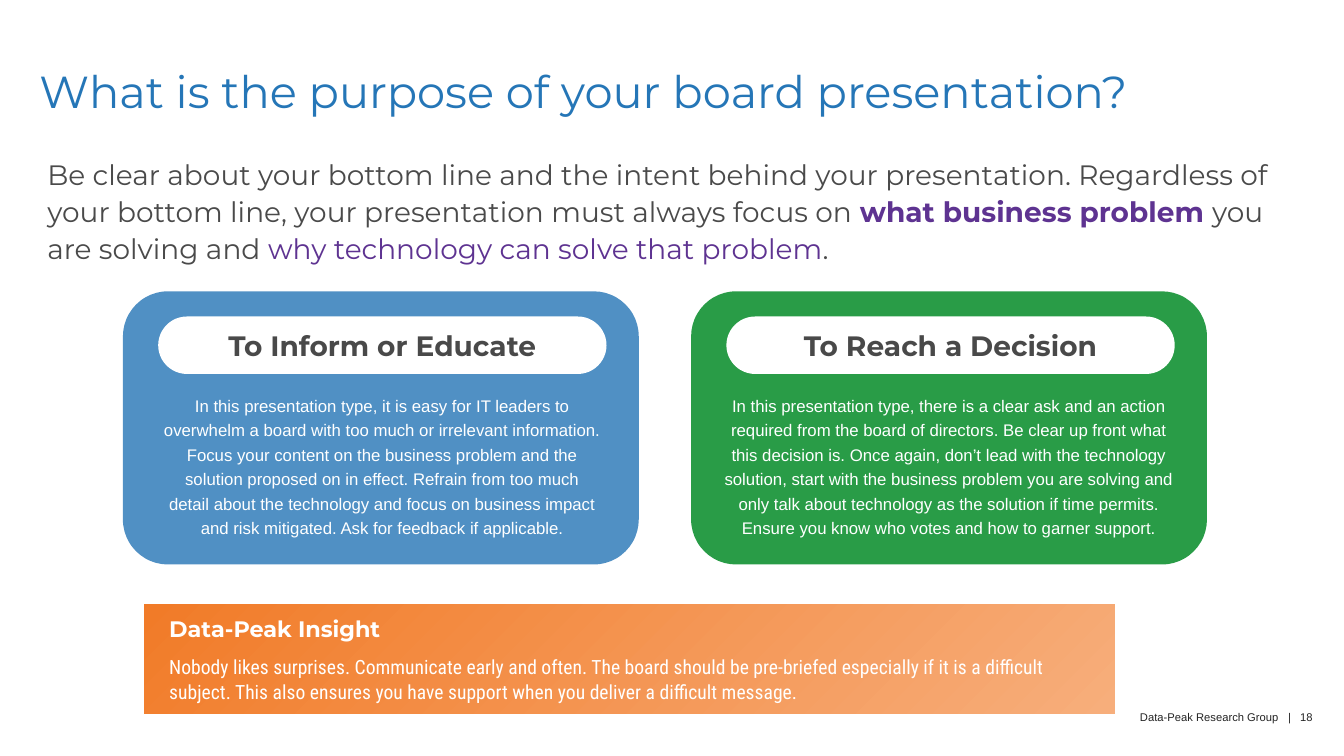
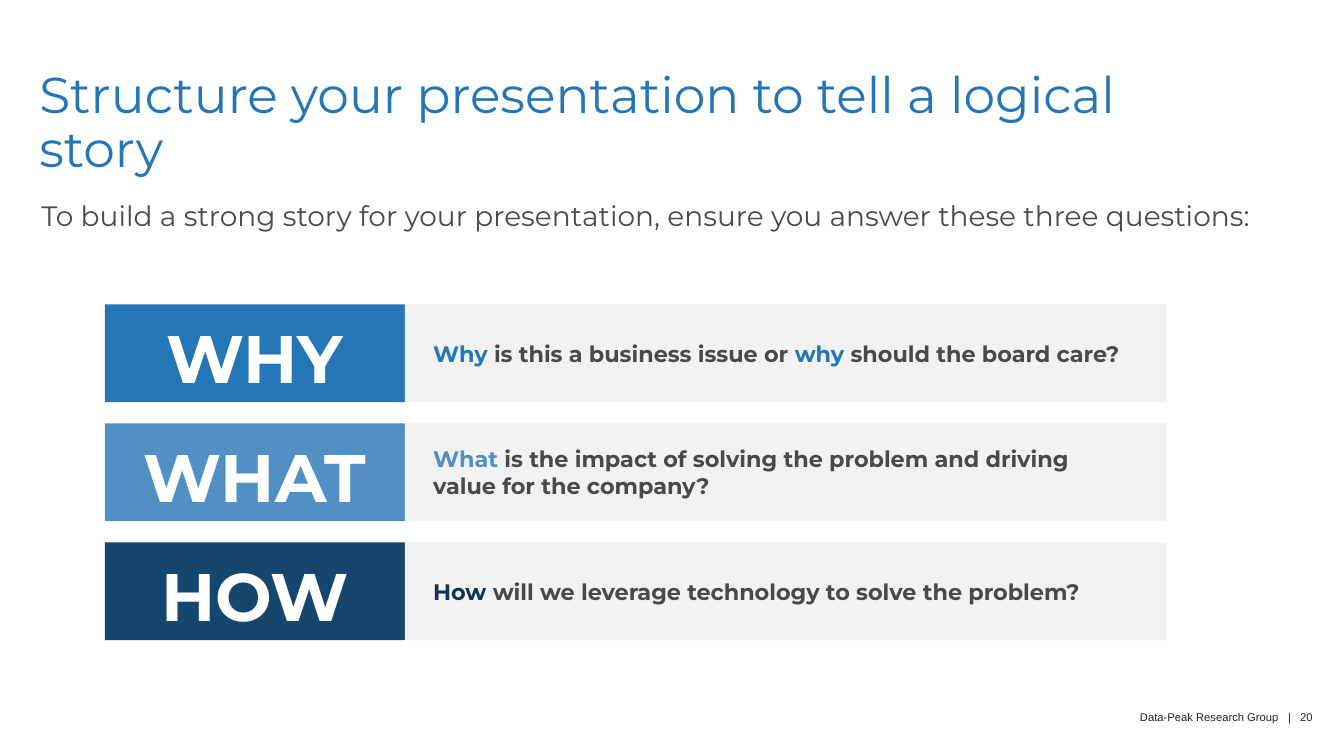
from pptx import Presentation
from pptx import util as u
from pptx.dml.color import RGBColor
from pptx.enum import shapes, text

PX = 9144  # EMU per px, 100 px to the inch

WHITE = RGBColor(0xFF, 0xFF, 0xFF)
INK = RGBColor(0x4A, 0x4A, 0x4A)
LABEL_INK = RGBColor(0x49, 0x49, 0x49)
FOOTER_INK = RGBColor(0x24, 0x24, 0x24)
BLUE = RGBColor(0x25, 0x76, 0xB7)
LIGHT_BLUE = RGBColor(0x50, 0x90, 0xC4)
DARK_BLUE = RGBColor(0x15, 0x46, 0x6D)
NAVY = RGBColor(0x10, 0x34, 0x52)
GREEN = RGBColor(0x29, 0x9C, 0x47)
PURPLE = RGBColor(0x5E, 0x33, 0x91)
ORANGE = RGBColor(0xF1, 0x7A, 0x26)
PEACH = RGBColor(0xF7, 0xAF, 0x7D)
PALE_GREY = RGBColor(0xF2, 0xF2, 0xF2)

HEAD_FONT = "Montserrat"
BODY_FONT = "Arial"
INSIGHT_FONT = "Roboto Condensed"

RECT = shapes.MSO_SHAPE.RECTANGLE
ROUND = shapes.MSO_SHAPE.ROUNDED_RECTANGLE
LEFT, CENTER, RIGHT = text.PP_ALIGN.LEFT, text.PP_ALIGN.CENTER, text.PP_ALIGN.RIGHT
TOP, MIDDLE = text.MSO_ANCHOR.TOP, text.MSO_ANCHOR.MIDDLE


class Board:
    """Holds the deck, its style and the current slide."""

    def __init__(self, width, height):
        self.deck = Presentation()
        self.deck.slide_width = u.Emu(width * PX)
        self.deck.slide_height = u.Emu(height * PX)
        self.slide = None

    def place(self, *lengths):
        return [u.Emu(length * PX) for length in lengths]

    def new_slide(self, title, size, title_width, number):
        self.slide = self.deck.slides.add_slide(self.deck.slide_layouts[6])
        self.text_box((39, 69, title_width, 64), [(title, BLUE, False)], size, spacing=0.9)
        self.footer(number)

    def footer(self, number):
        spans = [("Data-Peak Research Group", FOOTER_INK, False),
                 (" |", FOOTER_INK, False),
                 (f" {number}", FOOTER_INK, False)]
        para = self.text_box((1000, 705, 303, 13), spans, 8, BODY_FONT, align=RIGHT)
        # Letter spacing opens equal gaps around the bar
        para.runs[1]._r.get_or_add_rPr().set("spc", "440")

    def frame(self, shape, insets=(0, 0, 0, 0), anchor=TOP):
        frame = shape.text_frame
        frame.word_wrap = True
        frame.vertical_anchor = anchor
        (frame.margin_left, frame.margin_top,
         frame.margin_right, frame.margin_bottom) = self.place(*insets)
        return frame

    def fill_para(self, para, spans, size, font=HEAD_FONT, align=LEFT, spacing=None):
        para.alignment = align
        if spacing:
            para.line_spacing = spacing
        for words, color, bold in spans:
            span = para.add_run()
            span.text = words
            span.font.name = font
            span.font.size = u.Pt(size)
            span.font.bold = bold
            span.font.color.rgb = color
        return para

    def text_box(self, at, spans, size, font=HEAD_FONT, align=LEFT, spacing=None,
                 insets=(0, 0, 0, 0)):
        box = self.slide.shapes.add_textbox(*self.place(*at))
        para = self.frame(box, insets).paragraphs[0]
        return self.fill_para(para, spans, size, font, align, spacing)

    def shape(self, at, fill, kind=RECT, corner=None):
        shape = self.slide.shapes.add_shape(kind, *self.place(*at))
        shape.shadow.inherit = False
        shape.fill.solid()
        shape.fill.fore_color.rgb = fill
        shape.line.fill.background()
        if corner is not None:
            shape.adjustments[0] = corner
        return shape

    def label(self, shape, spans, size, align=CENTER, insets=(0, 0, 0, 0)):
        para = self.frame(shape, insets, MIDDLE).paragraphs[0]
        self.fill_para(para, spans, size, align=align)

    def card(self, left, fill, heading, body, body_left, body_width):
        self.shape((left, 289, 512, 271), fill, ROUND, 0.165)
        pill = self.shape((left + 35, 314, 445, 57), WHITE, ROUND, 0.5)
        self.label(pill, [(heading, LABEL_INK, True)], 20)
        self.text_box((body_left, 385, body_width, 154), [(body, WHITE, False)], 12,
                      BODY_FONT, CENTER, u.Pt(17.5), (5, 3, 5, 3))

    def insight(self, at, heading, body):
        panel = self.shape(at, ORANGE)
        panel.fill.gradient()
        panel.fill.gradient_angle = 315
        for stop, color in zip(panel.fill.gradient_stops, (ORANGE, PEACH)):
            stop.color.rgb = color
        panel.line.color.rgb = WHITE
        panel.line.width = u.Pt(14.75)
        frame = self.frame(panel, (35, 35, 35, 35), MIDDLE)
        self.fill_para(frame.paragraphs[0], [(heading, WHITE, True)], 16)
        para = frame.add_paragraph()
        para.space_before = u.Pt(8)
        self.fill_para(para, [(body, WHITE, False)], 14, INSIGHT_FONT, spacing=u.Pt(18))

    def question_row(self, top, word, fill, spans):
        tag = self.shape((104, top, 298, 97), fill)
        self.label(tag, [(word, WHITE, True)], 48, insets=(0, 6, 0, 0))
        band = self.shape((402, top, 756, 97), PALE_GREY)
        self.label(band, [(words, color, True) for words, color in spans], 16, LEFT,
                   (28, 5, 38, 5))


def purpose_slide(board):
    board.new_slide("What is the purpose of your board presentation?", 32, 1232, 18)
    board.text_box((47, 153, 1224, 116), [
        ("Be clear about your bottom line and the intent behind your presentation. "
         "Regardless of your bottom line, your presentation must always focus on ", INK, False),
        ("what business problem ", PURPLE, True),
        ("you are solving and ", INK, False),
        ("why technology can solve that problem", PURPLE, False),
        (".", INK, False)], 20, spacing=1.1)

    # Two kinds of presentation
    board.card(122, LIGHT_BLUE, "To Inform or Educate",
               "In this presentation type, it is easy for IT leaders to overwhelm a board with "
               "too much or irrelevant information. Focus your content on the business problem "
               "and the solution proposed on in effect. Refrain from too much detail about the "
               "technology and focus on business impact and risk mitigated. Ask for feedback if "
               "applicable.", 157, 445)
    board.card(686, GREEN, "To Reach a Decision",
               "In this presentation type, there is a clear ask and an action required from the "
               "board of directors. Be clear up front what this decision is. Once again, don’t "
               "lead with the technology solution, start with the business problem you are "
               "solving and only talk about technology as the solution if time permits. Ensure "
               "you know who votes and how to garner support.", 714, 456)

    board.insight((133, 589, 984, 130), "Data-Peak Insight",
                  "Nobody likes surprises. Communicate early and often. The board should be "
                  "pre-briefed especially if it is a difficult subject. This also ensures you "
                  "have support when you deliver a difficult message.")


def story_slide(board):
    board.new_slide("Structure your presentation to tell a logical story", 36, 1120, 20)
    board.text_box((41, 194, 1224, 50), [
        ("To build a strong story for your presentation, ensure you answer these three "
         "questions:", INK, False)], 20, spacing=1.1)

    # Three questions, evenly stacked
    questions = [
        ("WHY", BLUE, [("Why", BLUE), (" is this a business issue or ", LABEL_INK),
                       ("why ", BLUE), ("should the board care?", LABEL_INK)]),
        ("WHAT", LIGHT_BLUE, [("What", LIGHT_BLUE),
                              (" is the impact of solving the problem and driving value for "
                               "the company?", LABEL_INK)]),
        ("HOW", DARK_BLUE, [("How", NAVY),
                            (" will we leverage technology to solve the problem?", LABEL_INK)]),
    ]
    for index, (word, fill, spans) in enumerate(questions):
        board.question_row(302 + 118 * index, word, fill, spans)


def main():
    board = Board(1334, 750)
    purpose_slide(board)
    story_slide(board)
    board.deck.save("out.pptx")


if __name__ == "__main__":
    main()
